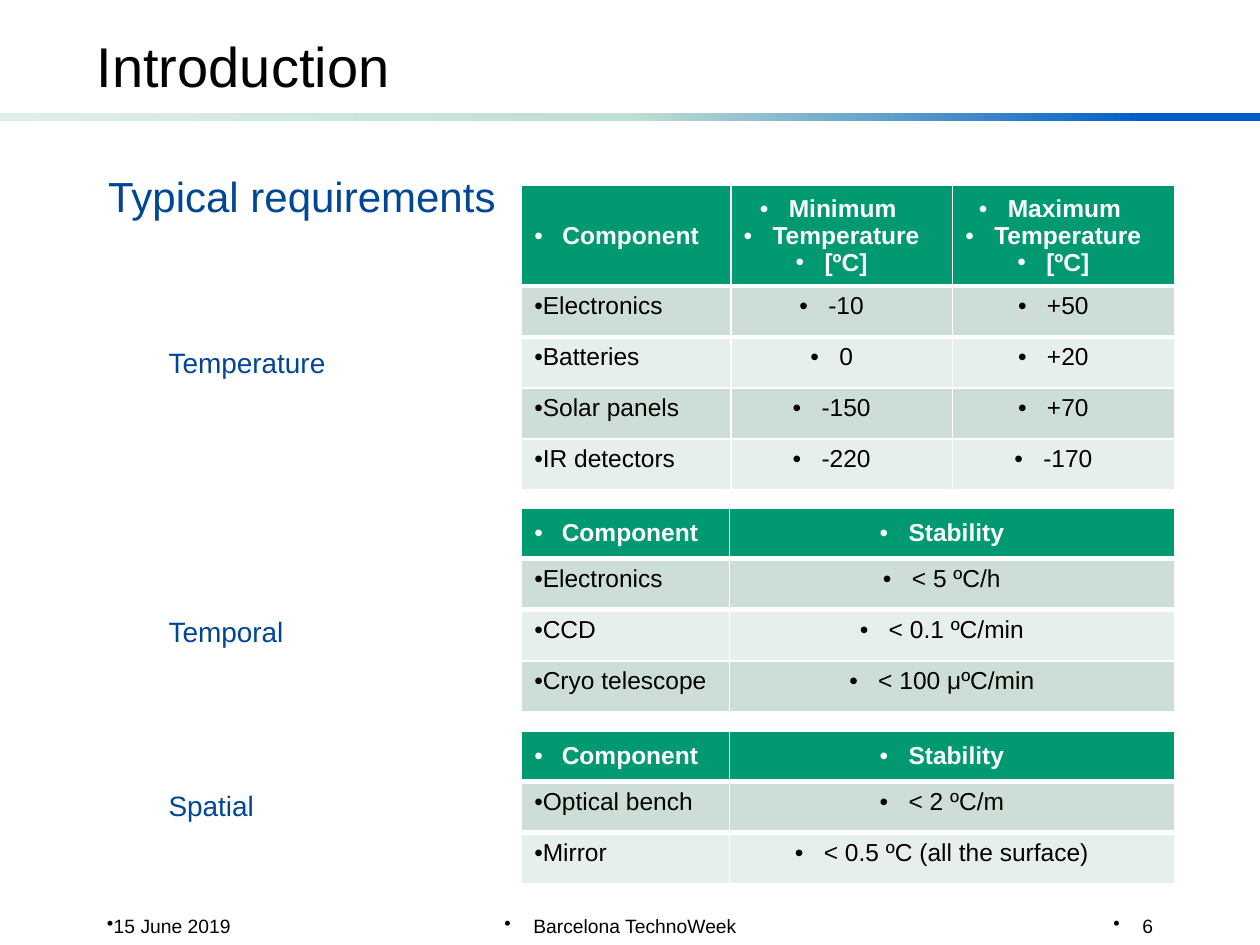
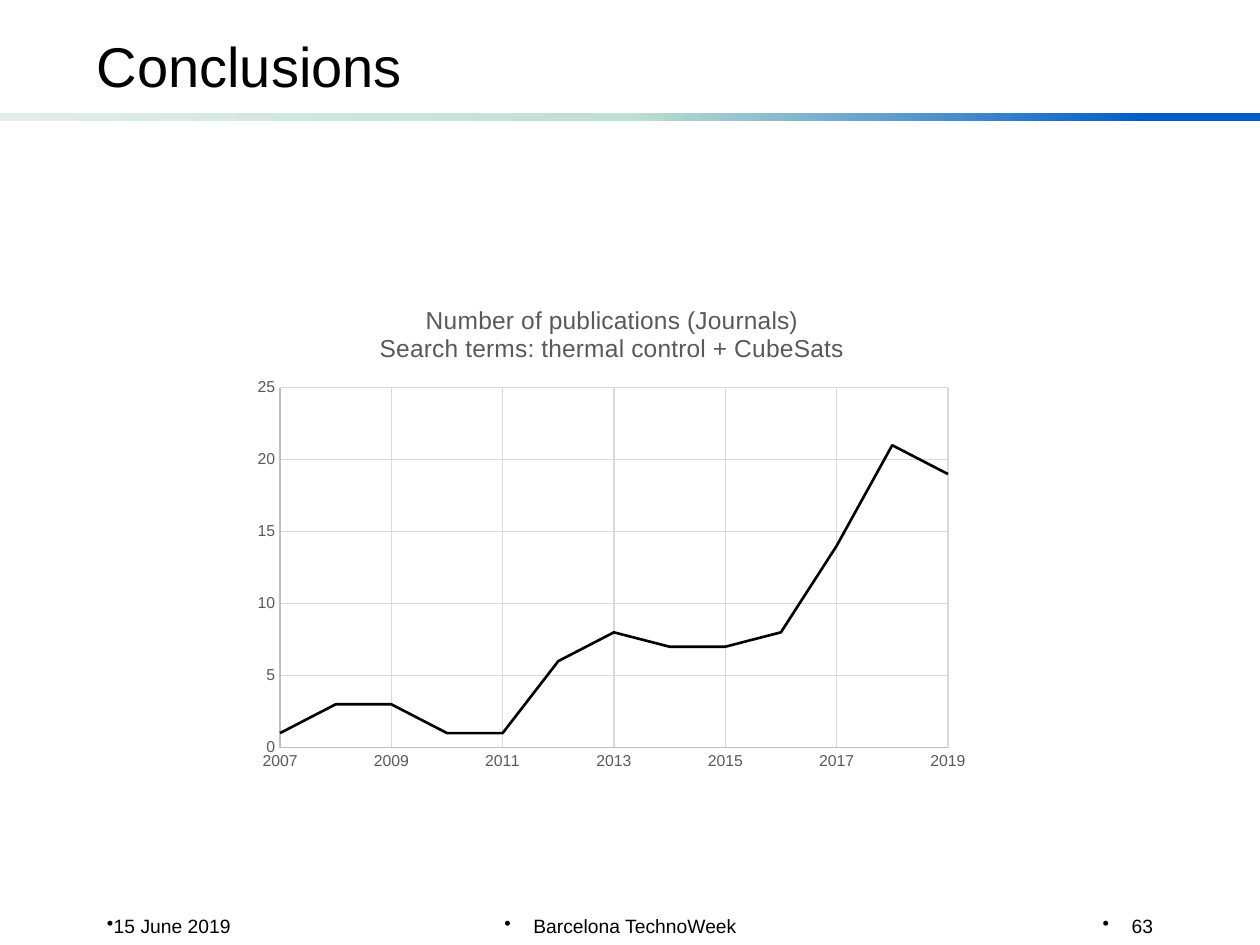
from lxml.etree import SubElement
from pptx import Presentation
from pptx.chart.data import XyChartData
from pptx.dml.color import RGBColor
from pptx.enum.chart import XL_CHART_TYPE, XL_TICK_MARK
from pptx.enum.shapes import MSO_SHAPE
from pptx.enum.text import MSO_ANCHOR, PP_ALIGN
from pptx.oxml.ns import qn
from pptx.util import Inches, Pt

FONT = "Arial"
BLACK, WHITE, BLUE, GREY = "000000", "FFFFFF", "004696", "595959"
AXIS_GREY, GRID_GREY = "BFBFBF", "D9D9D9"
HEADER_GREEN, BANDS = "009972", ("CCDED5", "E7EFEB")
RULE_STOPS = ((0, "E0EFE8"), (50, "BFDFD0"), (91, "005DC8"))

WIDTH, HEIGHT = 10, 7.5
FOOTER_TOP, FOOTER_HEIGHT = 7.25, 0.2
TABLE_LEFT, ROW_HEIGHT, TALL_HEADER = 4.14, 0.405, 0.8
THREE_COLUMNS, TWO_COLUMNS = (1.66, 1.76, 1.76), (1.65, 3.53)
BULLET_MARGIN, BULLET_HANG = 0.07, -0.23

TEMPERATURES = [
    ("Component", "Minimum \nTemperature\n[ºC]", "Maximum \nTemperature\n[ºC]"),
    ("Electronics", "-10", "+50"),
    ("Batteries", "0", "+20"),
    ("Solar panels", "-150", "+70"),
    ("IR detectors", "-220", "-170"),
]
TEMPORAL = [
    ("Component", "Stability"),
    ("Electronics", "< 5 ºC/h"),
    ("CCD", "< 0.1 ºC/min"),
    ("Cryo telescope", "< 100 μºC/min"),
]
SPATIAL = [
    ("Component", "Stability"),
    ("Optical bench", "< 2 ºC/m"),
    ("Mirror", "< 0.5 ºC (all the surface)"),
]
FIRST_YEAR, LAST_YEAR = 2007, 2019
PUBLICATIONS = (19, 21, 14, 8, 7, 7, 8, 6, 1, 1, 3, 3, 1)


def color(value):
    return RGBColor.from_string(value)


def style_font(font, size, value, bold=False):
    font.name, font.size, font.bold = FONT, Pt(size), bold
    font.color.rgb = color(value)


def add_bullet(para, bullet_font):
    hanging = para.alignment != PP_ALIGN.LEFT
    properties = para._p.get_or_add_pPr()
    properties.set("marL", str(Inches(BULLET_MARGIN) if hanging else 0))
    properties.set("indent", str(Inches(BULLET_HANG) if hanging else 0))
    if bullet_font:
        SubElement(properties, qn("a:buFont")).set("typeface", bullet_font)
    else:
        SubElement(properties, qn("a:buFontTx"))
    SubElement(properties, qn("a:buChar")).set("char", "•")


def write(frame, text, size, value, align=PP_ALIGN.LEFT, bold=False,
          bullet=False, bullet_font=None, spacing=None):
    frame.text = text
    for index, para in enumerate(frame.paragraphs):
        para.alignment = align
        para.line_spacing = spacing
        if index:
            para.space_before = Pt(1.25)
        if bullet:
            add_bullet(para, bullet_font)
        for span in para.runs:
            style_font(span.font, size, value, bold)


def add_text(slide, place, text, size, value=BLACK, anchor=MSO_ANCHOR.TOP, **options):
    box = slide.shapes.add_textbox(*map(Inches, place))
    box.text_frame.word_wrap = True
    box.text_frame.vertical_anchor = anchor
    write(box.text_frame, text, size, value, **options)


def add_rule(slide):
    rule = slide.shapes.add_shape(MSO_SHAPE.RECTANGLE, 0, Inches(0.9),
                                  Inches(WIDTH), Inches(0.06))
    rule.shadow.inherit = False
    rule.line.fill.background()
    rule.fill.gradient()
    rule.fill.gradient_angle = 0
    stops = rule._element.spPr.find(".//" + qn("a:gsLst"))
    for stop in list(stops):
        stops.remove(stop)
    for position, value in RULE_STOPS:
        stop = SubElement(stops, qn("a:gs"))
        stop.set("pos", str(position * 1000))
        SubElement(stop, qn("a:srgbClr")).set("val", value)


def add_page(deck, title, number):
    slide = deck.slides.add_slide(deck.slide_layouts[6])
    add_rule(slide)
    add_text(slide, (0.67, 0.12, 7.32, 0.71), title, 32, anchor=MSO_ANCHOR.BOTTOM)
    footers = (
        (0.75, 2.08, "15 June 2019", PP_ALIGN.LEFT),
        (3.42, 3.17, "Barcelona TechnoWeek", PP_ALIGN.CENTER),
        (7.17, 2.08, str(number), PP_ALIGN.RIGHT),
    )
    for left, width, text, align in footers:
        add_text(slide, (left, FOOTER_TOP, width, FOOTER_HEIGHT), text, 11,
                 anchor=MSO_ANCHOR.MIDDLE, align=align, bullet=True)
    return slide


def add_border(cell, side, points):
    properties = cell._tc.get_or_add_tcPr()
    line = properties.makeelement(qn("a:" + side), {"w": str(Pt(points))})
    fill = SubElement(line, qn("a:solidFill"))
    SubElement(fill, qn("a:srgbClr")).set("val", WHITE)
    properties.insert(0, line)


def add_requirements(slide, label, label_top, top, columns, rows, header_height=ROW_HEIGHT):
    add_text(slide, (1.24, label_top, 1.64, 0.34), label, 16, BLUE, spacing=0.9)
    height = header_height + ROW_HEIGHT * (len(rows) - 1)
    table = slide.shapes.add_table(
        len(rows), len(columns), Inches(TABLE_LEFT), Inches(top),
        Inches(sum(columns)), Inches(height)).table
    for column, width in zip(table.columns, columns):
        column.width = Inches(width)
    for row_index, row in enumerate(rows):
        header = row_index == 0
        table.rows[row_index].height = Inches(header_height if header else ROW_HEIGHT)
        for column_index, text in enumerate(row):
            cell = table.cell(row_index, column_index)
            cell.fill.solid()
            cell.fill.fore_color.rgb = color(
                HEADER_GREEN if header else BANDS[(row_index - 1) % 2])
            if row_index < 2:
                add_border(cell, "lnB" if header else "lnT", 3)
            cell.margin_top = Inches(0.07)
            cell.vertical_anchor = MSO_ANCHOR.MIDDLE if header else MSO_ANCHOR.TOP
            centred = header or column_index > 0
            write(cell.text_frame, text, 14, WHITE if header else BLACK,
                  align=PP_ALIGN.CENTER if centred else PP_ALIGN.LEFT,
                  bold=header, bullet=True, bullet_font=FONT, spacing=0.9)


def style_axis(axis, low, high, step):
    axis.minimum_scale, axis.maximum_scale, axis.major_unit = low, high, step
    axis.major_tick_mark = axis.minor_tick_mark = XL_TICK_MARK.NONE
    axis.has_major_gridlines = True
    style_font(axis.tick_labels.font, 9, GREY)
    for line, value in ((axis.format.line, AXIS_GREY),
                        (axis.major_gridlines.format.line, GRID_GREY)):
        line.color.rgb = color(value)
        line.width = Pt(0.75)


def place_part(part, **settings):
    for old in part.findall(qn("c:layout")):
        part.remove(old)
    layout = part.makeelement(qn("c:layout"))
    manual = SubElement(layout, qn("c:manualLayout"))
    for name, value in settings.items():
        SubElement(manual, qn("c:" + name)).set("val", str(value))
    text = part.find(qn("c:tx"))
    part.insert(0 if text is None else 1, layout)


def add_publications(slide):
    data = XyChartData()
    series = data.add_series("Series 1")
    for year, count in zip(range(LAST_YEAR, FIRST_YEAR - 1, -1), PUBLICATIONS):
        series.add_data_point(year, count)
    chart = slide.shapes.add_chart(
        XL_CHART_TYPE.XY_SCATTER_LINES_NO_MARKERS,
        *map(Inches, (1.93, 2.25, 5.85, 3.94)), data).chart
    style_font(chart.font, 10, BLACK)
    chart.has_legend = False
    chart.has_title = True
    write(chart.chart_title.text_frame,
          "Number of publications (Journals)\nSearch terms: thermal control + CubeSats",
          14, GREY, align=PP_ALIGN.CENTER)
    chart.chart_title.include_in_layout = False
    style_axis(chart.category_axis, FIRST_YEAR, LAST_YEAR, 2)
    style_axis(chart.value_axis, 0, 25, 5)
    plot = chart.plots[0]
    plot.vary_by_categories = False
    curve = plot.series[0]
    curve.smooth = False
    curve.format.line.color.rgb = color(BLACK)
    curve.format.line.width = Pt(1.5)
    place_part(chart.chart_title._element, xMode="edge", yMode="edge", x=0.18, y=7 / 200)
    place_part(chart._chartSpace.find(".//" + qn("c:plotArea")), layoutTarget="inner",
               xMode="edge", yMode="edge", x=0.05, y=0.21, w=29 / 32, h=29 / 40)


def main():
    deck = Presentation()
    deck.slide_width, deck.slide_height = Inches(WIDTH), Inches(HEIGHT)

    introduction = add_page(deck, "Introduction", 6)
    add_text(introduction, (0.76, 1.35, 8.49, 0.46), "Typical requirements", 24, BLUE,
             spacing=0.9)
    add_requirements(introduction, "Temperature", 2.72, 1.47, THREE_COLUMNS,
                     TEMPERATURES, TALL_HEADER)
    add_requirements(introduction, "Temporal", 4.86, 4.03, TWO_COLUMNS, TEMPORAL)
    add_requirements(introduction, "Spatial", 6.24, 5.8, TWO_COLUMNS, SPATIAL)

    conclusions = add_page(deck, "Conclusions", 63)
    add_publications(conclusions)

    deck.save("out.pptx")


if __name__ == "__main__":
    main()
